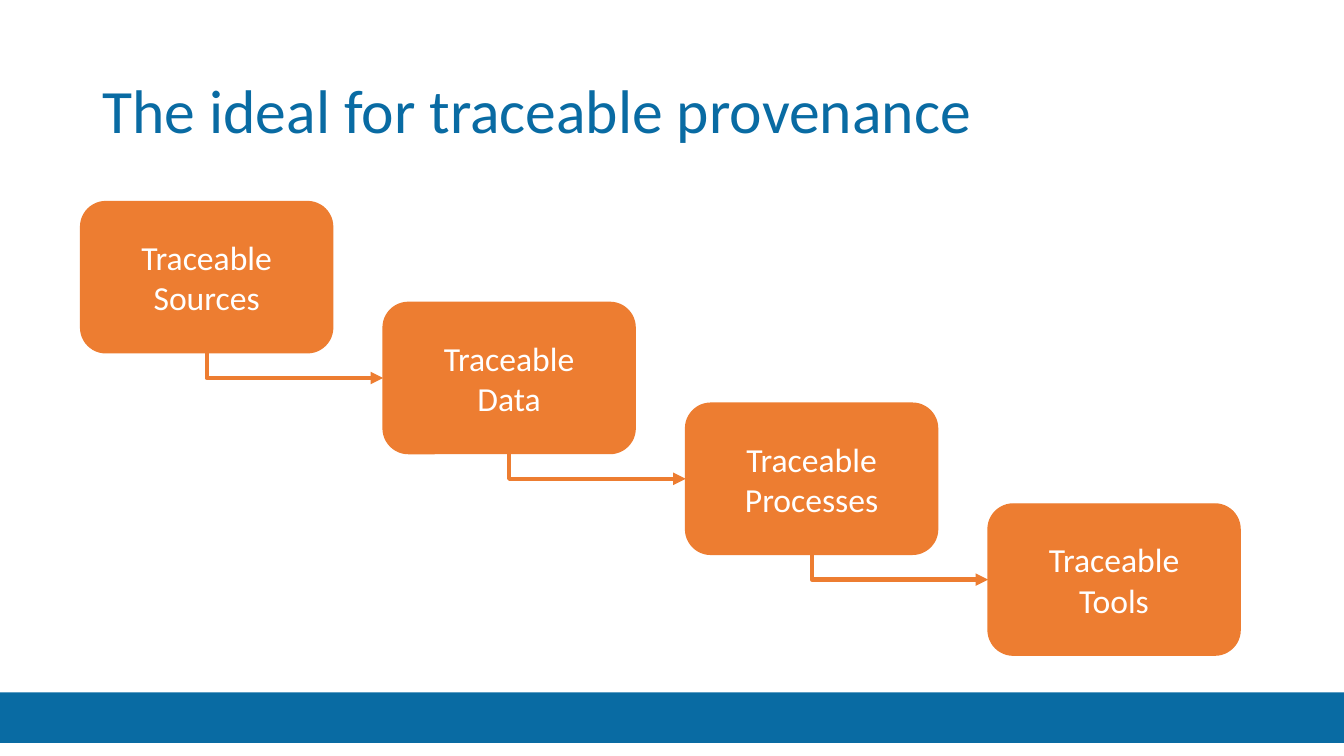
from dataclasses import dataclass
from itertools import pairwise

from lxml.etree import SubElement
from pptx import Presentation
from pptx.dml.color import RGBColor
from pptx.enum.shapes import MSO_CONNECTOR, MSO_SHAPE
from pptx.enum.text import MSO_ANCHOR, PP_ALIGN
from pptx.oxml.ns import qn
from pptx.util import Inches, Pt


@dataclass(frozen=True)
class Theme:
    font: str = "Calibri"
    blue: RGBColor = RGBColor(0x09, 0x6B, 0xA3)
    orange: RGBColor = RGBColor(0xED, 0x7D, 0x31)
    white: RGBColor = RGBColor(0xFF, 0xFF, 0xFF)
    title_size: Pt = Pt(44)
    step_size: Pt = Pt(24)


def add_block(kind, x, y, w, h, color):
    sp = s.shapes.add_shape(kind, Inches(x), Inches(y), Inches(w), Inches(h))
    sp.shadow.inherit = False
    sp.fill.solid()
    sp.fill.fore_color.rgb = color
    sp.line.color.rgb = color
    sp.line.width = Pt(1)
    return sp


def add_text(tf, lines, size, color, align):
    tf.word_wrap = True
    tf.vertical_anchor = MSO_ANCHOR.MIDDLE
    for i, line in enumerate(lines):
        p = tf.paragraphs[0] if i == 0 else tf.add_paragraph()
        p.alignment = align
        r = p.add_run()
        r.text = line
        r.font.name = theme.font
        r.font.size = size
        r.font.color.rgb = color


theme = Theme()
prs = Presentation()
prs.slide_width = Inches(13.33)
prs.slide_height = Inches(7.5)
s = prs.slides.add_slide(prs.slide_layouts[6])

footer = add_block(MSO_SHAPE.RECTANGLE, 0, 6.87, 13.33, 0.5, theme.blue)
footer.line.fill.background()

title = s.shapes.add_textbox(Inches(0.92), Inches(0.4), Inches(11.5), Inches(1.45))
add_text(title.text_frame, ["The ideal for traceable provenance"],
         theme.title_size, theme.blue, PP_ALIGN.LEFT)
title.text_frame.paragraphs[0].line_spacing = 0.9

STEPS = [
    ["Traceable Sources"],
    ["Traceable", "Data"],
    ["Traceable Processes"],
    ["Traceable", "Tools"],
]
boxes = []
for i, lines in enumerate(STEPS):
    box = add_block(MSO_SHAPE.ROUNDED_RECTANGLE, 0.8 + 3 * i, 2 + i, 2.5, 1.5, theme.orange)
    add_text(box.text_frame, lines, theme.step_size, theme.white, PP_ALIGN.CENTER)
    boxes.append(box)

for upper, lower in pairwise(boxes):
    x1, y1 = upper.left + upper.width // 2, upper.top + upper.height
    x2, y2 = lower.left, lower.top + lower.height // 2
    run, drop = x2 - x1, y2 - y1
    arrow = s.shapes.add_connector(MSO_CONNECTOR.ELBOW, x1, y1, x2, y2)
    arrow.begin_connect(upper, 2)
    arrow.end_connect(lower, 1)
    arrow.left, arrow.top = x1 + (run - drop) // 2, y1 + (drop - run) // 2
    arrow.width, arrow.height = drop, run
    arrow.line.color.rgb = theme.orange
    arrow.line.width = Pt(3)
    props = arrow._element.spPr
    props.find(qn("a:prstGeom")).set("prst", "bentConnector2")
    xfrm = props.find(qn("a:xfrm"))
    xfrm.set("rot", "16200000")
    xfrm.set("flipH", "1")
    SubElement(props.find(qn("a:ln")), qn("a:tailEnd"), type="triangle")
    SubElement(props, qn("a:effectLst"))

prs.save("out.pptx")
